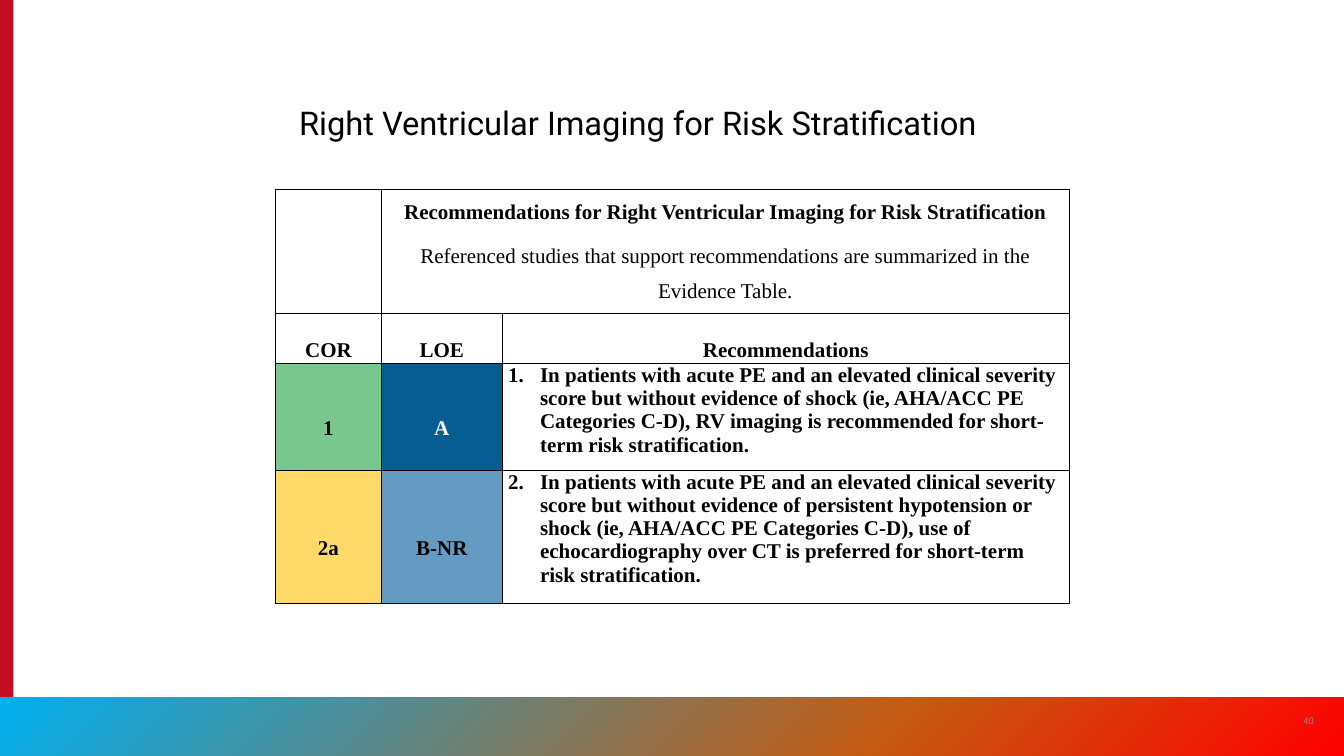
from copy import deepcopy
from dataclasses import dataclass

from lxml.etree import SubElement
from pptx import Presentation
from pptx.dml.color import RGBColor
from pptx.enum.shapes import MSO_SHAPE
from pptx.enum.text import MSO_ANCHOR, MSO_AUTO_SIZE, PP_ALIGN
from pptx.oxml.ns import qn
from pptx.util import Inches, Pt


@dataclass(frozen=True)
class Theme:
    sans: str = "Roboto"
    serif: str = "Times New Roman"
    black: str = "000000"
    white: str = "FFFFFF"
    grey: str = "8A8B8A"
    red: str = "C10E21"
    band: tuple = ((0, "00B0F0"), (0.66, "C55A11"), (1, "FF0000"))
    title_size: int = 28
    table_size: int = 18
    number_size: int = 8
    border_width: int = 1


THEME = Theme()
COLUMN_WIDTHS = (1.26, 1.44, 6.75)
ROW_HEIGHTS = (1.48, 0.54, 1.27, 1.58)
INTRO = (
    ("Recommendations for Right Ventricular Imaging for Risk Stratification", True),
    ("Referenced studies that support recommendations are summarized in the "
     "Evidence Table.", False),
)
HEADINGS = ("COR", "LOE", "Recommendations")
# COR and its fill, LOE with its fill and text colour, recommendation
RECOMMENDATIONS = (
    ("1", "79C78D", "A", "065D93", THEME.white,
     "In patients with acute PE and an elevated clinical severity score but "
     "without evidence of shock (ie, AHA/ACC PE Categories C-D), RV imaging is "
     "recommended for short-term risk stratification."),
    ("2a", "FFDA68", "B-NR", "659BC2", THEME.black,
     "In patients with acute PE and an elevated clinical severity score but "
     "without evidence of persistent hypotension or shock (ie, AHA/ACC PE "
     "Categories C-D), use of echocardiography over CT is preferred for "
     "short-term risk stratification."),
)


def rgb(value):
    return RGBColor.from_string(value)


def write(paragraph, text, font, size, color=THEME.black, bold=False,
          align=PP_ALIGN.LEFT):
    paragraph.text = text
    paragraph.alignment = align
    for run in paragraph.runs:
        run.font.name = font
        run.font.size = Pt(size)
        run.font.bold = bold
        run.font.color.rgb = rgb(color)


def add_block(slide, box):
    block = slide.shapes.add_shape(MSO_SHAPE.RECTANGLE, *map(Inches, box))
    block.shadow.inherit = False
    block.line.fill.background()
    return block


def add_side_bar(slide, box):
    fill = add_block(slide, box).fill
    fill.solid()
    fill.fore_color.rgb = rgb(THEME.red)


def add_footer(slide, box, number):
    """Gradient band with the slide number near its right end."""
    left, top, width, _ = box
    band = add_block(slide, box)
    band.fill.gradient()
    band.fill.gradient_angle = 315
    stop_list = band._element.spPr.find(qn("a:gradFill")).find(qn("a:gsLst"))
    stop_list.append(deepcopy(stop_list[-1]))
    for stop, (position, color) in zip(band.fill.gradient_stops, THEME.band):
        stop.position = position
        stop.color.rgb = rgb(color)

    side = 0.48
    number_box = slide.shapes.add_textbox(
        Inches(left + width - 0.66), Inches(top + 0.04), Inches(side), Inches(side))
    frame = number_box.text_frame
    frame.word_wrap = True
    frame.vertical_anchor = MSO_ANCHOR.MIDDLE
    write(frame.paragraphs[0], number, THEME.sans, THEME.number_size, THEME.grey,
          align=PP_ALIGN.CENTER)


def add_title(slide, box, text):
    title = slide.shapes.title
    title.left, title.top, title.width, title.height = map(Inches, box)
    frame = title.text_frame
    frame.auto_size = MSO_AUTO_SIZE.NONE
    frame.vertical_anchor = MSO_ANCHOR.TOP
    write(frame.paragraphs[0], text, THEME.sans, THEME.title_size)


def draw_borders(cell):
    properties = cell._tc.get_or_add_tcPr()
    for index, side in enumerate(("a:lnL", "a:lnR", "a:lnT", "a:lnB")):
        line = SubElement(properties, qn(side), w=str(Pt(THEME.border_width)))
        fill = SubElement(line, qn("a:solidFill"))
        SubElement(fill, qn("a:srgbClr"), val=THEME.black)
        properties.insert(index, line)


def write_cell(paragraph, text, color=THEME.black, bold=True, spacing=None,
               align=PP_ALIGN.CENTER):
    write(paragraph, text, THEME.serif, THEME.table_size, color, bold, align)
    paragraph.space_after = Pt(8)
    if spacing:
        paragraph.line_spacing = spacing


def fill_label(cell, text, fill=None, color=THEME.black):
    cell.vertical_anchor = MSO_ANCHOR.MIDDLE
    write_cell(cell.text_frame.paragraphs[0], text, color, spacing=2.0)
    if fill:
        cell.fill.solid()
        cell.fill.fore_color.rgb = rgb(fill)


def fill_recommendation(cell, text, number):
    paragraph = cell.text_frame.paragraphs[0]
    properties = paragraph._p.get_or_add_pPr()
    indent = Inches(0.38)
    properties.set("marL", str(indent))
    properties.set("indent", str(-indent))
    SubElement(properties, qn("a:buFont"), typeface="+mj-lt")
    SubElement(properties, qn("a:buAutoNum"), type="arabicPeriod",
               startAt=str(number))
    write_cell(paragraph, text, align=PP_ALIGN.LEFT)


def add_recommendation_table(slide, left, top):
    table = slide.shapes.add_table(
        len(ROW_HEIGHTS), len(COLUMN_WIDTHS), Inches(left), Inches(top),
        Inches(sum(COLUMN_WIDTHS)), Inches(sum(ROW_HEIGHTS))).table
    table.first_row = table.horz_banding = False
    for column, width in zip(table.columns, COLUMN_WIDTHS):
        column.width = Inches(width)
    for row, height in zip(table.rows, ROW_HEIGHTS):
        row.height = Inches(height)
    for cell in table.iter_cells():
        cell.margin_left = cell.margin_right = Inches(0.07)
        cell.margin_top = cell.margin_bottom = 0
        cell.fill.background()
        draw_borders(cell)

    intro = table.cell(0, 1)
    intro.merge(table.cell(0, 2))
    intro.text_frame.text = "\n".join(text for text, _ in INTRO)
    for paragraph, (text, bold) in zip(intro.text_frame.paragraphs, INTRO):
        write_cell(paragraph, text, bold=bold, spacing=1.5)
    for column, heading in enumerate(HEADINGS):
        fill_label(table.cell(1, column), heading)
    for number, entry in enumerate(RECOMMENDATIONS, start=1):
        cor, cor_fill, loe, loe_fill, loe_color, text = entry
        row = number + 1
        fill_label(table.cell(row, 0), cor, cor_fill)
        fill_label(table.cell(row, 1), loe, loe_fill, loe_color)
        fill_recommendation(table.cell(row, 2), text, number)


def main():
    deck = Presentation()
    deck.slide_width, deck.slide_height = Inches(16), Inches(9)
    slide = deck.slides.add_slide(deck.slide_layouts[5])
    add_side_bar(slide, (0, 0, 0.16, 9))
    add_footer(slide, (0, 8.3, 16, 0.7), "40")
    add_title(slide, (3.46, 1.17, 9.09, 0.57),
              "Right Ventricular Imaging for Risk Stratification")
    add_recommendation_table(slide, 3.28, 2.25)
    deck.save("out.pptx")


if __name__ == "__main__":
    main()
